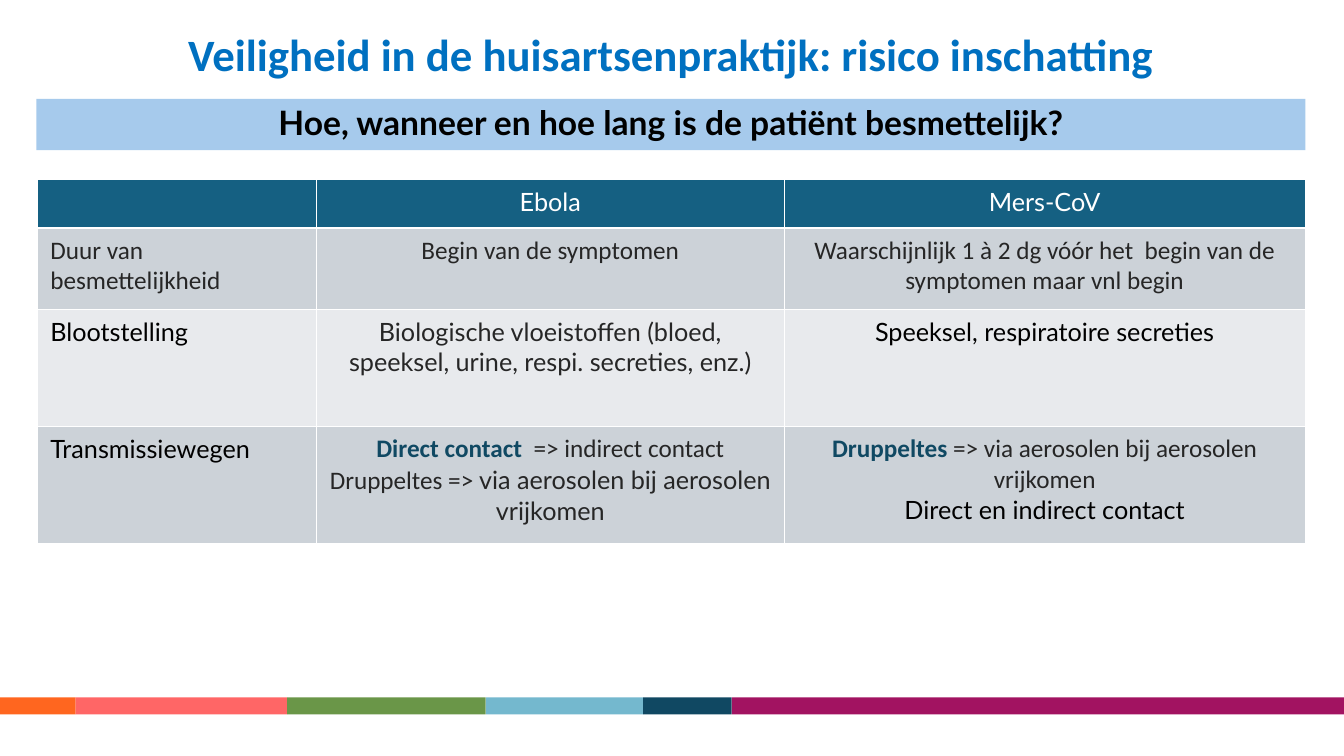
from dataclasses import dataclass
from itertools import pairwise

from lxml import etree
from pptx import Presentation
from pptx.dml.color import RGBColor
from pptx.enum.shapes import MSO_SHAPE
from pptx.enum.text import MSO_ANCHOR, MSO_AUTO_SIZE, PP_ALIGN
from pptx.oxml.ns import qn
from pptx.util import Pt

RECTANGLE = MSO_SHAPE.RECTANGLE
MIDDLE = MSO_ANCHOR.MIDDLE
NO_AUTOFIT = MSO_AUTO_SIZE.NONE
CENTER, LEFT = PP_ALIGN.CENTER, PP_ALIGN.LEFT

COLORS = {
    "title": "0070C0", "banner": "A6CAEC", "header": "156082",
    "dark_row": "CCD2D8", "light_row": "E8EAED", "accent": "104963",
    "gray": "262626", "black": "000000", "white": "FFFFFF",
    "orange": "FF661F", "coral": "FF6666", "green": "6A9648",
    "sky": "74B8CE", "navy": "104862", "magenta": "A21361",
}


@dataclass(frozen=True)
class Span:
    text: str
    font: str = "Lato"
    color: str = "black"
    bold: bool = False


def rgb(name: str) -> RGBColor:
    return RGBColor.from_string(COLORS[name])


def set_font(font, style: Span, size: float) -> None:
    font.name, font.size, font.bold = style.font, Pt(size), style.bold
    font.color.rgb = rgb(style.color)


def write_para(para, spans: list[Span], size: float, align=CENTER) -> None:
    """Write the spans, styling the paragraph when they all look alike."""
    para.alignment = align
    for span in spans:
        run = para.add_run()
        run.text = span.text
        if len(spans) > 1:
            set_font(run.font, span, size)
    if len(spans) == 1:
        set_font(para.font, spans[0], size)


def fill_placeholder(box, bounds: tuple, span: Span, size: float) -> None:
    """Place a title or body placeholder and give it one centred line."""
    box.left, box.top, box.width, box.height = map(Pt, bounds)
    frame = box.text_frame
    frame.auto_size = NO_AUTOFIT
    frame.word_wrap = True
    frame.vertical_anchor = MIDDLE
    frame.margin_left = frame.margin_right = 0
    frame.margin_top = frame.margin_bottom = 0
    para = frame.paragraphs[0]
    para.line_spacing = 0.9
    para.space_before = Pt(0)
    properties = para._p.get_or_add_pPr()
    properties.set("marL", "0")
    properties.set("indent", "0")
    etree.SubElement(properties, qn("a:buNone"))
    write_para(para, [span], size)


def add_borders(cell) -> None:
    """Draw white one-point lines on all four sides."""
    properties = cell._tc.get_or_add_tcPr()
    for index, side in enumerate(("lnL", "lnR", "lnT", "lnB")):
        line = etree.Element(qn(f"a:{side}"), w=str(Pt(1)))
        paint = etree.SubElement(line, qn("a:solidFill"))
        etree.SubElement(paint, qn("a:srgbClr"), val=COLORS["white"])
        properties.insert(index, line)


def fill_cell(cell, paras: list[list[Span]], fill: str, align) -> None:
    cell.fill.solid()
    cell.fill.fore_color.rgb = rgb(fill)
    add_borders(cell)
    cell.margin_left = cell.margin_right = Pt(9.36)
    cell.margin_top = cell.margin_bottom = Pt(5.04)
    frame = cell.text_frame
    for index, spans in enumerate(paras):
        para = frame.add_paragraph() if index else frame.paragraphs[0]
        write_para(para, spans, 18, align)


def add_risk_table(page) -> None:
    table = page.shapes.add_table(
        len(ROWS), len(COLUMN_WIDTHS), Pt(26.64), Pt(128.3),
        Pt(sum(COLUMN_WIDTHS)), Pt(sum(ROW_HEIGHTS))).table
    for column, width in zip(table.columns, COLUMN_WIDTHS):
        column.width = Pt(width)
    for row, height, cells, fill in zip(table.rows, ROW_HEIGHTS, ROWS, ROW_FILLS):
        row.height = Pt(height)
        for index, (cell, paras) in enumerate(zip(row.cells, cells)):
            fill_cell(cell, paras, fill, CENTER if index else LEFT)


def add_stripe(page) -> None:
    edges = [0, *(end for _, end in STRIPE)]
    for (left, right), (color, _) in zip(pairwise(edges), STRIPE):
        band = page.shapes.add_shape(
            RECTANGLE, Pt(left), Pt(498.2), Pt(right - left), Pt(12.2))
        band.shadow.inherit = False
        band.fill.solid()
        band.fill.fore_color.rgb = rgb(color)
        band.line.fill.background()


def gray(text: str) -> Span:
    return Span(text, "Calibri", "gray")


def accent(text: str) -> Span:
    return Span(text, "Calibri", "accent", True)


STRIPE = [("orange", 54), ("coral", 205.2), ("green", 347),
          ("sky", 459.4), ("navy", 522.7), ("magenta", 960)]
COLUMN_WIDTHS = [199.4, 334.1, 372.2]
ROW_HEIGHTS = [34.6, 58.3, 83.5, 83.5]
ROW_FILLS = ["header", "dark_row", "light_row", "dark_row"]
ROWS = [
    [[], [[Span("Ebola", color="white")]], [[Span("Mers-CoV", color="white")]]],
    [[[gray("Duur van besmettelijkheid")]],
     [[gray("Begin van de symptomen")]],
     [[gray("Waarschijnlijk 1 à 2 dg vóór het  begin van de symptomen "
            "maar vnl begin")]]],
    [[[Span("Blootstelling")]],
     [[Span("Biologische vloeistoffen (bloed, speeksel, urine, respi. "
            "secreties, enz.)", color="gray")]],
     [[Span("Speeksel, respiratoire secreties")]]],
    [[[Span("Transmissiewegen")]],
     [[accent("Direct contact  "), gray("=> indirect contact")],
      [gray("Druppeltes => "),
       Span("via aerosolen bij aerosolen vrijkomen", color="gray")]],
     [[accent("Druppeltes"), gray(" => via aerosolen bij aerosolen vrijkomen")],
      [Span("Direct en indirect contact")]]],
]


def main() -> None:
    deck = Presentation()
    deck.slide_width, deck.slide_height = Pt(960), Pt(540)
    page = deck.slides.add_slide(deck.slide_layouts[1])
    title, banner = page.placeholders
    fill_placeholder(
        title, (25.92, 22.3, 907.2, 37.4),
        Span("Veiligheid in de huisartsenpraktijk: risico inschatting",
             "Calibri", "title", True), 32)
    fill_placeholder(
        banner, (25.92, 70.6, 906.5, 36.7),
        Span("Hoe, wanneer en hoe lang is de patiënt besmettelijk?",
             bold=True), 24)
    banner.fill.solid()
    banner.fill.fore_color.rgb = rgb("banner")
    add_risk_table(page)
    add_stripe(page)
    deck.save("out.pptx")


if __name__ == "__main__":
    main()
